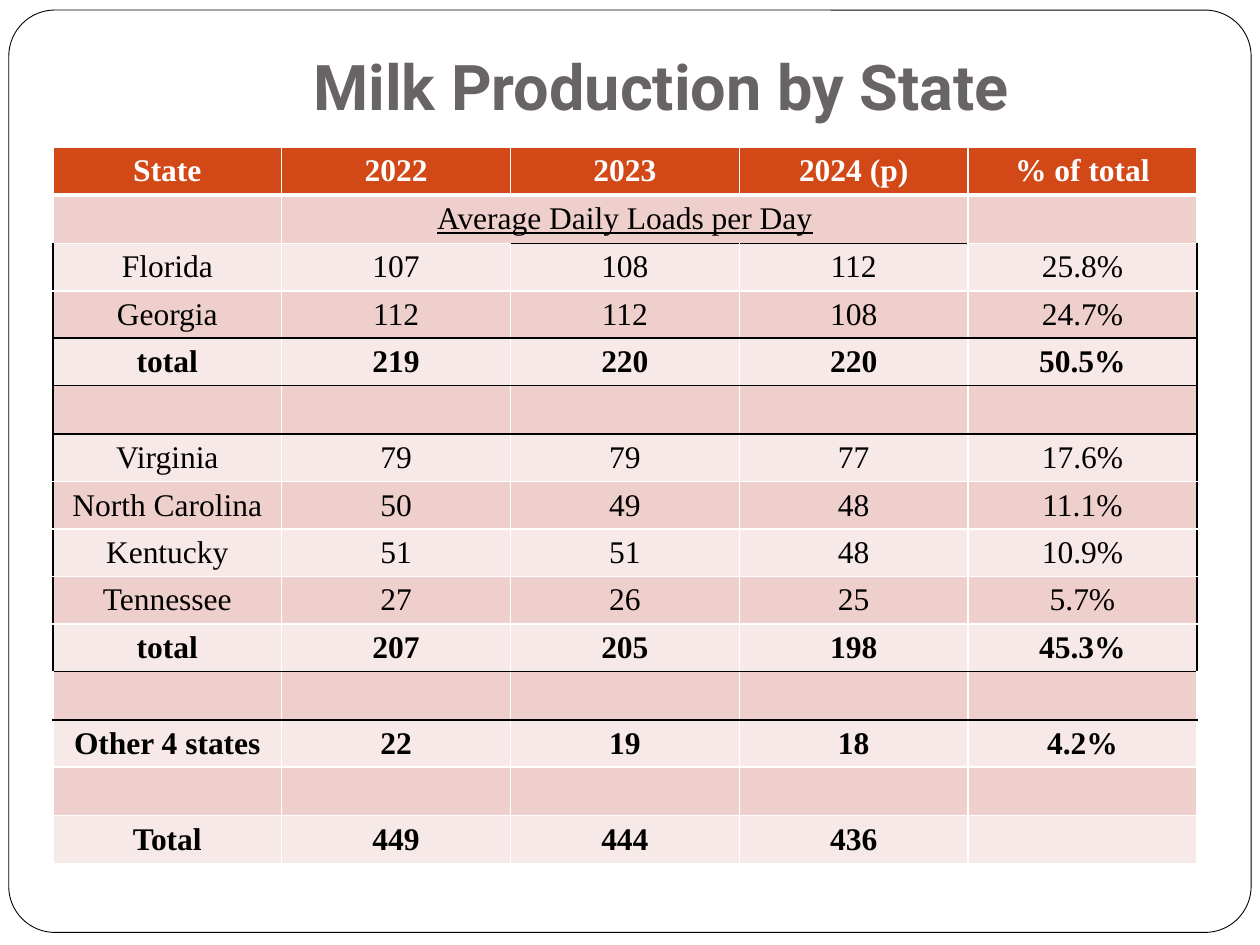
from lxml import etree
from pptx import Presentation
from pptx.dml.color import RGBColor
from pptx.enum.shapes import MSO_SHAPE
from pptx.enum.text import MSO_ANCHOR, PP_ALIGN
from pptx.oxml.ns import qn
from pptx.util import Inches, Pt

ROUND_RECT = MSO_SHAPE.ROUNDED_RECTANGLE
CENTER = PP_ALIGN.CENTER
MIDDLE, BOTTOM = MSO_ANCHOR.MIDDLE, MSO_ANCHOR.BOTTOM
COLORS = {"white": "FFFFFF", "black": "000000", "title": "696464",
          "header": "D34817", "dark band": "EFCFCC", "light band": "F7E9E8"}

ROWS = [
    ["State", "2022", "2023", "2024 (p)", "% of total"],
    ["", "Average Daily Loads per Day", "", "", ""],
    ["Florida", "107", "108", "112", "25.8%"],
    ["Georgia", "112", "112", "108", "24.7%"],
    ["total", "219", "220", "220", "50.5%"],
    [""] * 5,
    ["Virginia", "79", "79", "77", "17.6%"],
    ["North Carolina", "50", "49", "48", "11.1%"],
    ["Kentucky", "51", "51", "48", "10.9%"],
    ["Tennessee", "27", "26", "25", "5.7%"],
    ["total", "207", "205", "198", "45.3%"],
    [""] * 5,
    ["Other 4 states", "22", "19", "18", "4.2%"],
    [""] * 5,
    ["Total", "449", "444", "436", ""],
]
N_ROWS, N_COLS = len(ROWS), len(ROWS[0])
SUBHEAD = 1
BOLD_ROWS = {0, 4, 10, 12, 14}
BOXED_ROWS = range(2, 11)
RULED_ROWS = {3, 4, 5, 10, 11}


def rule_below(row, col):
    """Colour and width in points of the line under a row; -1 is the table's top."""
    if row == 0:
        return "white", 3
    black = row in RULED_ROWS or (row == SUBHEAD and col in (2, 3))
    return ("black" if black else "white"), 1


def add_border(cell, side, color, width):
    ln = etree.SubElement(cell._tc.get_or_add_tcPr(), qn(f"a:ln{side}"), w=str(Pt(width)))
    fill = etree.SubElement(ln, qn("a:solidFill"))
    etree.SubElement(fill, qn("a:srgbClr"), val=COLORS[color])


prs = Presentation()
prs.slide_width, prs.slide_height = Inches(10), Inches(7.5)
s = prs.slides.add_slide(prs.slide_layouts[5])

# Title
title = s.shapes.title
title.left, title.top, title.width, title.height = map(Inches, (1, 0.3, 8.5, 0.78))
tf = title.text_frame
tf.text = "Milk Production by State"
tf.vertical_anchor = BOTTOM
tf.margin_bottom = Inches(0.1)
p = tf.paragraphs[0]
p.alignment = CENTER
font = p.runs[0].font
font.name, font.size, font.bold = "Roboto", Pt(36), True
font.color.rgb = RGBColor.from_string(COLORS["title"])

# Rounded frame behind everything
frame = s.shapes.add_shape(ROUND_RECT, *map(Inches, (0.07, 0.08, 9.86, 7.32)))
frame.adjustments[0] = 0.05
frame.shadow.inherit = False
frame.fill.solid()
frame.fill.fore_color.rgb = RGBColor.from_string(COLORS["white"])
frame.line.color.rgb = RGBColor.from_string(COLORS["black"])
frame.line.width = Pt(0.5)
title.element.addprevious(frame.element)

# Production table
table = s.shapes.add_table(N_ROWS, N_COLS, *map(Inches, (0.42, 1.17, 9.08, 5.65))).table
table.cell(SUBHEAD, 1).merge(table.cell(SUBHEAD, 3))
for row, texts in enumerate(ROWS):
    band = "header" if row == 0 else "dark band" if row % 2 else "light band"
    boxed = row in BOXED_ROWS
    for col, text in enumerate(texts):
        cell = table.cell(row, col)
        add_border(cell, "L", "black" if boxed and col == 0 else "white", 1)
        add_border(cell, "R", "black" if boxed and col == N_COLS - 1 else "white", 1)
        add_border(cell, "T", *rule_below(row - 1, col))
        add_border(cell, "B", *rule_below(row, col))
        cell.fill.solid()
        cell.fill.fore_color.rgb = RGBColor.from_string(COLORS[band])
        cell.margin_top = cell.margin_bottom = Inches(0.04)
        cell.vertical_anchor = MIDDLE
        if not text:
            continue
        cell.text_frame.text = text
        p = cell.text_frame.paragraphs[0]
        p.alignment = CENTER
        font = p.runs[0].font
        font.name, font.size = "Times New Roman", Pt(18)
        font.bold = row in BOLD_ROWS
        font.underline = row == SUBHEAD
        font.color.rgb = RGBColor.from_string(COLORS["black" if row else "white"])

prs.save("out.pptx")
